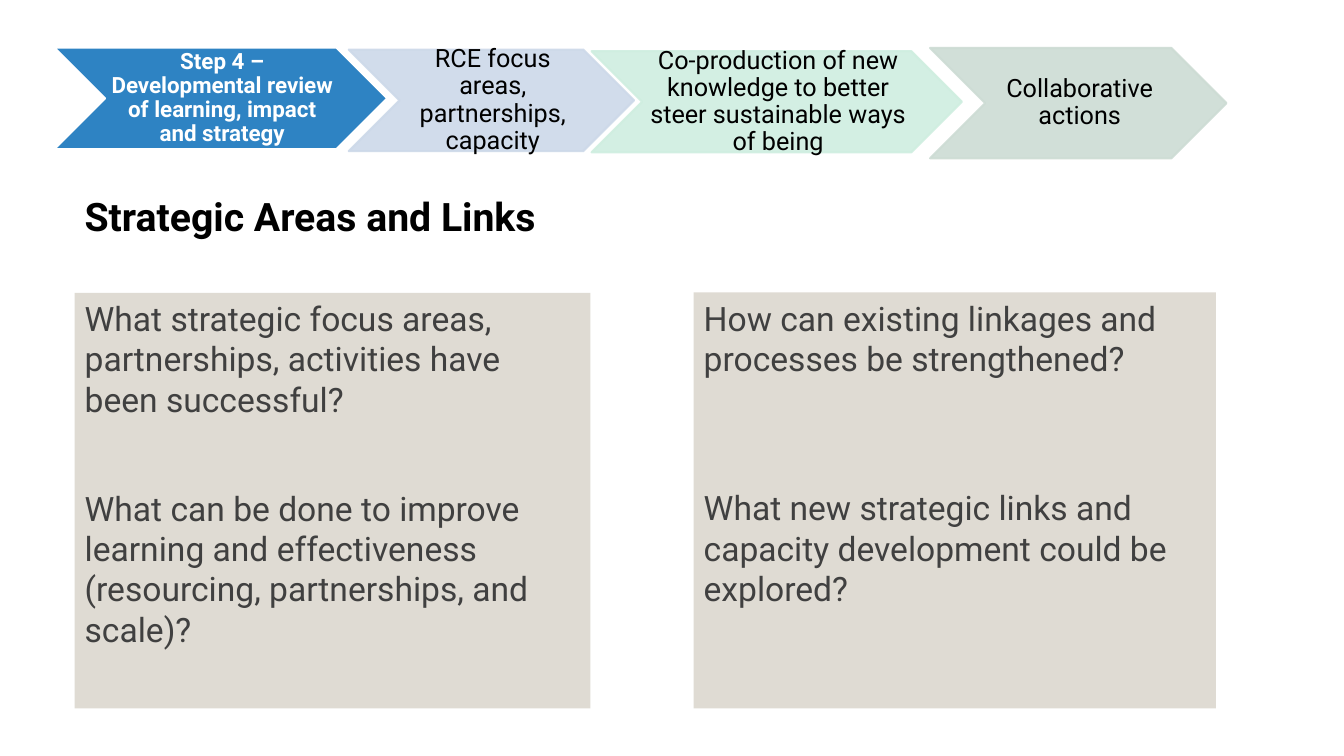
from dataclasses import dataclass

from lxml.etree import SubElement
from pptx import Presentation
from pptx.dml.color import RGBColor
from pptx.enum.shapes import MSO_SHAPE
from pptx.enum.text import MSO_ANCHOR, MSO_AUTO_SIZE, PP_ALIGN
from pptx.oxml.ns import qn
from pptx.util import Cm, Pt

FONT = "Roboto"
BLACK = RGBColor(0x00, 0x00, 0x00)
WHITE = RGBColor(0xFF, 0xFF, 0xFF)
DARK_GREY = RGBColor(0x40, 0x40, 0x40)
STONE = RGBColor(0xDF, 0xDB, 0xD3)
BLUE = RGBColor(0x2E, 0x83, 0xC3)
PALE_BLUE = RGBColor(0xCD, 0xD9, 0xE9)
MINT = RGBColor(0xCF, 0xEE, 0xE0)
SAGE = RGBColor(0xCD, 0xDC, 0xD4)


@dataclass
class Box:
    """Left, top, width and height in centimetres."""
    left: float
    top: float
    width: float
    height: float

    def lengths(self):
        return Cm(self.left), Cm(self.top), Cm(self.width), Cm(self.height)


@dataclass
class Step:
    text: str
    box: Box
    fill: RGBColor
    current: bool = False


@dataclass
class Panel:
    questions: list[str]
    box: Box
    gap: float  # points between the two questions


STEPS = [
    Step("Step 4 – Developmental review of learning, impact and strategy",
         Box(1.37, 1.2, 8.39, 2.56), BLUE, current=True),
    Step("RCE focus areas, partnerships, capacity",
         Box(8.79, 1.25, 7.19, 2.56), PALE_BLUE),
    Step("Co-production of new knowledge to better steer sustainable ways of being",
         Box(14.91, 1.29, 9.33, 2.55), MINT),
    Step("Collaborative actions", Box(23.44, 1.21, 7.47, 2.78), SAGE),
]

PANELS = [
    Panel(["What strategic focus areas, partnerships, activities have been successful?",
           "What can be done to improve learning and effectiveness "
           "(resourcing, partnerships, and scale)?"],
          Box(1.88, 7.38, 13.0, 10.47), 49),
    Panel(["How can existing linkages and processes be strengthened?",
           "What new strategic links and capacity development could be explored?"],
          Box(17.48, 7.37, 13.16, 10.48), 78),
]


def set_font(para, size: float, color: RGBColor, bold: bool = False) -> None:
    para.font.name = FONT
    para.font.size = Pt(size)
    para.font.bold = bold
    para.font.color.rgb = color


def place(shape, box: Box) -> None:
    shape.left, shape.top, shape.width, shape.height = box.lengths()


def draw_title(title) -> None:
    place(title, Box(1.88, 4.72, 16.81, 1.45))
    frame = title.text_frame
    frame.text = "Strategic Areas and Links"
    frame.auto_size = MSO_AUTO_SIZE.NONE
    frame.vertical_anchor = MSO_ANCHOR.TOP
    para = frame.paragraphs[0]
    para.alignment = PP_ALIGN.LEFT
    set_font(para, 28, BLACK, bold=True)


def draw_panel(body, panel: Panel) -> None:
    place(body, panel.box)
    body.fill.solid()
    body.fill.fore_color.rgb = STONE
    frame = body.text_frame
    frame.text = "\n".join(panel.questions)
    frame.auto_size = MSO_AUTO_SIZE.NONE
    frame.vertical_anchor = MSO_ANCHOR.TOP
    for para, space in zip(frame.paragraphs, (10, panel.gap)):
        para.space_before = Pt(space)
        set_font(para, 24, DARK_GREY)
        # No bullet and no hanging indent
        properties = para._p.get_or_add_pPr()
        properties.set("marL", "0")
        properties.set("indent", "0")
        properties.insert_element_before(
            properties.makeelement(qn("a:buNone")), "a:tabLst", "a:defRPr", "a:extLst")


def draw_step(page, step: Step) -> None:
    chevron = page.shapes.add_shape(MSO_SHAPE.CHEVRON, *step.box.lengths())
    chevron.shadow.inherit = False
    chevron.fill.solid()
    chevron.fill.fore_color.rgb = step.fill
    chevron.line.color.rgb = WHITE if step.current else step.fill
    chevron.line.width = Pt(1.5)
    if not step.current:
        # Later steps are slightly see-through, in fill and line
        for color in chevron._element.spPr.iter(qn("a:srgbClr")):
            SubElement(color, qn("a:alpha")).set("val", "90000")
    frame = chevron.text_frame
    frame.word_wrap = True
    frame.vertical_anchor = MSO_ANCHOR.MIDDLE
    frame.margin_left, frame.margin_right = Cm(0.07), 0
    frame.margin_top = frame.margin_bottom = Cm(0.03)
    frame.text = step.text
    para = frame.paragraphs[0]
    para.alignment = PP_ALIGN.CENTER
    para.line_spacing = 0.9
    if step.current:
        set_font(para, 16, WHITE, bold=True)
    else:
        set_font(para, 18, BLACK)


def main() -> None:
    deck = Presentation()
    deck.slide_width, deck.slide_height = Cm(33.87), Cm(19.05)
    page = deck.slides.add_slide(deck.slide_layouts.get_by_name("Two Content"))

    # Heading and question panels
    title, *bodies = page.placeholders
    draw_title(title)
    for body, panel in zip(bodies, PANELS):
        draw_panel(body, panel)

    # Process chevrons
    for step in STEPS:
        draw_step(page, step)

    deck.save("out.pptx")


if __name__ == "__main__":
    main()
